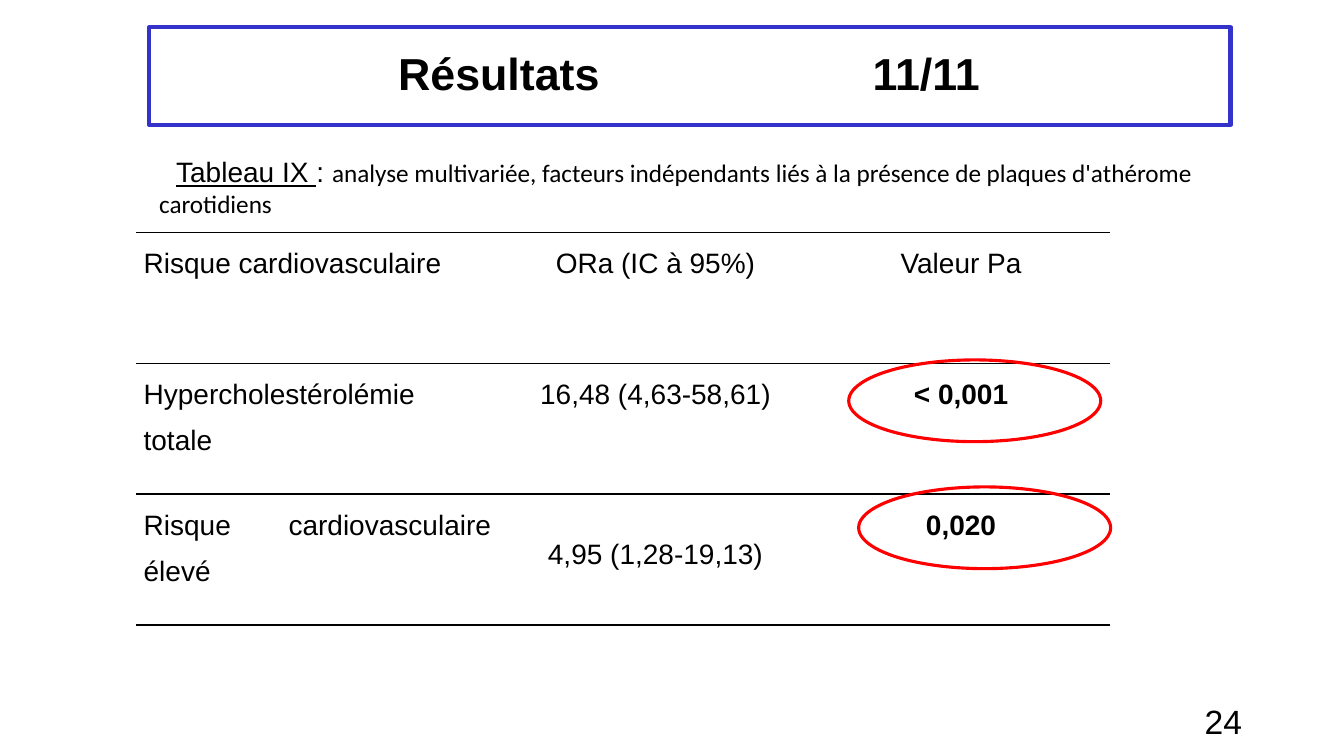
from lxml import etree
from pptx import Presentation
from pptx.dml.color import RGBColor
from pptx.enum.shapes import MSO_SHAPE
from pptx.enum.text import MSO_ANCHOR, PP_ALIGN
from pptx.oxml.ns import qn
from pptx.util import Cm, Pt

RECT_ANCHOR = MSO_ANCHOR.MIDDLE
TOP = MSO_ANCHOR.TOP
LEFT, CENTER, RIGHT, JUSTIFY = PP_ALIGN.LEFT, PP_ALIGN.CENTER, PP_ALIGN.RIGHT, PP_ALIGN.JUSTIFY
OVAL = MSO_SHAPE.OVAL
PLAIN_TABLE = "{2D5ABB26-0587-4C30-8999-92F81FD0307C}"
BLACK, BLUE, RED = "000000", "3333CC", "FF0000"


def color(hex_value):
    return RGBColor.from_string(hex_value)


def style(run, size, bold=False, font="Arial"):
    run.font.name = font
    run.font.size = Pt(size)
    run.font.bold = bold
    run.font.color.rgb = color(BLACK)


prs = Presentation()
prs.slide_width, prs.slide_height = Cm(33.87), Cm(19.05)
slide = prs.slides.add_slide(prs.slide_layouts[5])

title = slide.shapes.title
title.left, title.top, title.width, title.height = Cm(3.76), Cm(0.69), Cm(27.25), Cm(2.46)
title.line.color.rgb = color(BLUE)
title.line.width = Pt(3)
title.text_frame.text = "Résultats\t11/11"
title.text_frame.vertical_anchor = RECT_ANCHOR
title.text_frame.margin_left = Cm(6.27)
heading = title.text_frame.paragraphs[0]
heading.alignment = LEFT
heading.line_spacing = 0.9
tabs = etree.SubElement(heading._p.get_or_add_pPr(), qn("a:tabLst"))
etree.SubElement(tabs, qn("a:tab"), pos=str(Cm(11.96)), algn="l")
for run in heading.runs:
    style(run, 32, bold=True)

page_number = slide.shapes.add_textbox(Cm(23.93), Cm(17.65), Cm(7.62), Cm(1.02)).text_frame
page_number.word_wrap = True
page_number.vertical_anchor = RECT_ANCHOR
page_number.text = "24"
page_number.paragraphs[0].alignment = RIGHT
style(page_number.paragraphs[0].runs[0], 24)

caption = slide.shapes.add_textbox(Cm(3.76), Cm(3.78), Cm(29.01), Cm(2.74)).text_frame
caption.word_wrap = True
caption_line = caption.paragraphs[0]
caption_line._p.get_or_add_pPr().set("indent", str(Cm(0.43)))
for words, size, font, underlined in [
    ("Tableau IX ", 20, "Arial", True),
    (": ", 20, "Arial", False),
    ("analyse multivariée, facteurs indépendants liés à la présence de plaques "
     "d'athérome carotidiens", 18, "Calibri", False),
]:
    run = caption_line.add_run()
    run.text = words
    style(run, size, font=font)
    run.font.underline = underlined

risk_rows = [
    ("Risque cardiovasculaire", "ORa (IC à 95%)", "Valeur Pa"),
    ("Hypercholestérolémie totale", "16,48 (4,63-58,61)", "< 0,001"),
    ("Risque cardiovasculaire élevé", "4,95 (1,28-19,13)", "0,020"),
]
risks = slide.shapes.add_table(3, 3, Cm(3.43), Cm(5.85), Cm(24.54), Cm(9.9)).table
risks.first_row = risks.horz_banding = False
risks._tbl.tblPr.find(qn("a:tableStyleId")).text = PLAIN_TABLE
for column, width in zip(risks.columns, (9.14, 7.9, 7.5)):
    column.width = Cm(width)

for r, values in enumerate(risk_rows):
    for c, value in enumerate(values):
        cell = risks.cell(r, c)
        cell.text_frame.text = value
        cell.margin_left = cell.margin_right = Cm(0.19)
        cell.margin_top = cell.margin_bottom = 0
        cell.vertical_anchor = TOP
        paragraph = cell.text_frame.paragraphs[0]
        paragraph.alignment = CENTER if c else JUSTIFY
        paragraph.line_spacing = 1.5
        style(paragraph.runs[0], 20, bold=r > 0 and c == 2)
        for edge in ("a:lnT", "a:lnB"):
            border = etree.SubElement(cell._tc.get_or_add_tcPr(), qn(edge), w=str(Pt(1)))
            fill = etree.SubElement(border, qn("a:solidFill"))
            etree.SubElement(fill, qn("a:srgbClr"), val=BLACK)
        cell.fill.background()

high_risk_ratio = risks.cell(2, 1)
high_risk_ratio.vertical_anchor = RECT_ANCHOR
high_risk_ratio.text_frame.paragraphs[0].line_spacing = Pt(16)

for left, top in ((21.39, 9.07), (21.64, 12.27)):
    highlight = slide.shapes.add_shape(OVAL, Cm(left), Cm(top), Cm(6.35), Cm(2.06))
    highlight.shadow.inherit = False
    highlight.fill.background()
    highlight.line.color.rgb = color(RED)
    highlight.line.width = Pt(2.25)

prs.save("out.pptx")
